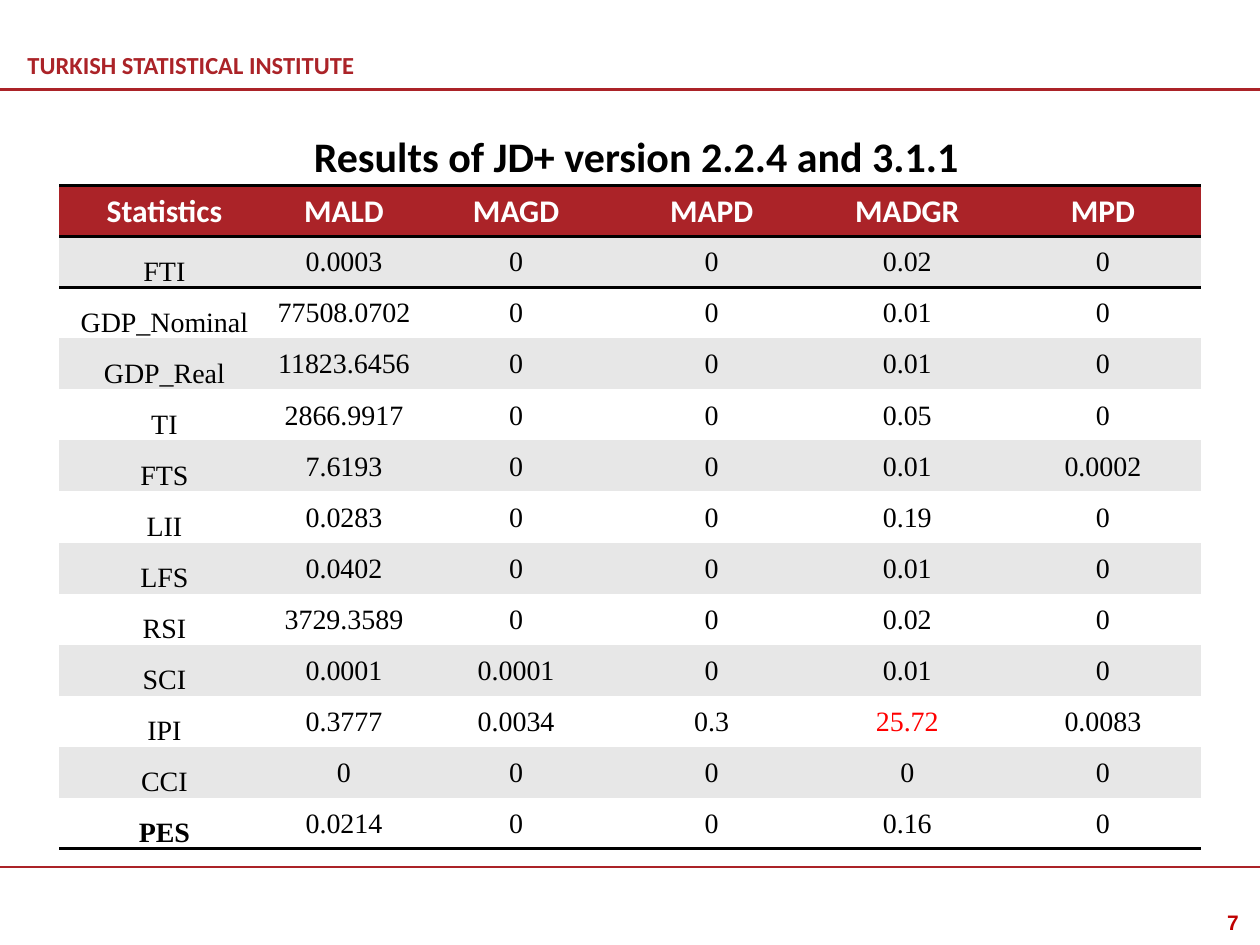
from lxml.etree import SubElement as Sub
from pptx import Presentation
from pptx.dml.color import RGBColor as Rgb
from pptx.enum.shapes import MSO_CONNECTOR as Link
from pptx.enum.text import MSO_ANCHOR as Anchor, PP_ALIGN as Align
from pptx.oxml import parse_xml
from pptx.oxml.ns import nsdecls, qn
from pptx.util import Inches, Pt

HUES = {
    "brand": "AB2328",
    "page": "C00000",
    "alert": "FF0000",
    "ink": "000000",
    "paper": "FFFFFF",
    "band": "E7E7E7",
}
COLS, ROWS = 100, 75
PLAIN = "{2D5ABB26-0587-4C30-8999-92F81FD0307C}"

HEAD = ["Statistics", "MALD", "MAGD", "MAPD", "MADGR", "MPD"]
DATA = [
    ["FTI", "0.0003", "0", "0", "0.02", "0"],
    ["GDP_Nominal", "77508.0702", "0", "0", "0.01", "0"],
    ["GDP_Real", "11823.6456", "0", "0", "0.01", "0"],
    ["TI", "2866.9917", "0", "0", "0.05", "0"],
    ["FTS", "7.6193", "0", "0", "0.01", "0.0002"],
    ["LII", "0.0283", "0", "0", "0.19", "0"],
    ["LFS", "0.0402", "0", "0", "0.01", "0"],
    ["RSI", "3729.3589", "0", "0", "0.02", "0"],
    ["SCI", "0.0001", "0.0001", "0", "0.01", "0"],
    ["IPI", "0.3777", "0.0034", "0.3", "25.72", "0.0083"],
    ["CCI", "0", "0", "0", "0", "0"],
    ["PES", "0.0214", "0", "0", "0.16", "0"],
]


class Deck:
    def __init__(self):
        self.show = Presentation()
        self.show.slide_width = Inches(10)
        self.show.slide_height = Inches(7.5)
        self.slide = self.show.slides.add_slide(self.show.slide_layouts[6])

    def x(self, cols):
        return round(self.show.slide_width * cols / COLS)

    def y(self, rows):
        return round(self.show.slide_height * rows / ROWS)

    def style(self, para, size, face, hue, bold, align):
        para.alignment = align
        font = para.font
        font.size, font.name, font.bold = Pt(size), face, bold
        font.color.rgb = Rgb.from_string(HUES[hue])

    def text(self, words, left, top, wide, high, size, face="Calibri",
             hue="ink", align=Align.LEFT, anchor=Anchor.TOP):
        box = self.slide.shapes.add_textbox(
            self.x(left), self.y(top), self.x(wide), self.y(high))
        frame = box.text_frame
        frame.word_wrap = True
        frame.vertical_anchor = anchor
        if anchor == Anchor.BOTTOM:
            frame.margin_bottom = 0
        para = frame.paragraphs[0]
        para.text = words
        self.style(para, size, face, hue, True, align)

    def rule(self, row):
        line = self.slide.shapes.add_connector(
            Link.STRAIGHT, 0, self.y(row), self.x(COLS), self.y(row))
        line.line.color.rgb = Rgb.from_string(HUES["brand"])
        line.line.width = Pt(1.5)
        Sub(line._element.spPr, qn("a:effectLst"))

    def edge(self, cell, sides):
        for spot, side in enumerate(sides):
            cell._tc.get_or_add_tcPr().insert(spot, parse_xml(
                f'<a:ln{side} {nsdecls("a")} w="{Pt(2)}"><a:solidFill>'
                f'<a:srgbClr val="{HUES["ink"]}"/></a:solidFill></a:ln{side}>'))

    def cell(self, cell, words, fill, anchor, size, face, hue, bold):
        cell.margin_left = cell.margin_right = cell.margin_top = Inches(0.01)
        cell.margin_bottom = 0
        cell.vertical_anchor = anchor
        cell.fill.solid()
        cell.fill.fore_color.rgb = Rgb.from_string(HUES[fill])
        para = cell.text_frame.paragraphs[0]
        para.text = words
        self.style(para, size, face, hue, bold, Align.CENTER)

    def table(self, head, data, left, top, wide, high, first, second):
        grid = self.slide.shapes.add_table(
            len(data) + 1, len(head), self.x(left), self.y(top),
            self.x(wide), self.y(high)).table
        grid._tbl.tblPr.find(qn("a:tableStyleId")).text = PLAIN
        rest = (wide - first - second) / (len(head) - 2)
        for col, span in zip(grid.columns, [first, second] + [rest] * (len(head) - 2)):
            col.width = self.x(span)
        for row in grid.rows:
            row.height = self.y(high / (len(data) + 1))
        for c, words in enumerate(head):
            cell = grid.cell(0, c)
            self.cell(cell, words, "brand", Anchor.MIDDLE, 18, "Calibri", "paper", True)
            self.edge(cell, "TB")
        for r, row in enumerate(data, 1):
            for c, words in enumerate(row):
                self.cell(
                    grid.cell(r, c), words, "band" if r % 2 else "paper",
                    Anchor.MIDDLE if c else Anchor.BOTTOM, 16, "Times New Roman",
                    "alert" if words == "25.72" else "ink", words == "PES")
        for c in range(len(head)):
            self.edge(grid.cell(1, c), "T")
            self.edge(grid.cell(len(data), c), "B")


def main():
    deck = Deck()
    deck.text("TURKISH STATISTICAL INSTITUTE", 1.2, 1.9, 35.4, 4.4, 14,
              hue="brand", anchor=Anchor.BOTTOM)
    deck.rule(7.1)
    deck.rule(68.8)
    deck.text("7", 76, 71.7, 23.3, 3.3, 12, "Arial", "page", Align.RIGHT)
    deck.text("Results of JD+ version 2.2.4 and 3.1.1", 7.2, 9.9, 86.6, 5, 24,
              align=Align.CENTER)
    deck.table(HEAD, DATA, 4.7, 14.7, 90.6, 52.7, 16.7, 11.8)
    deck.show.save("out.pptx")


if __name__ == "__main__":
    main()
